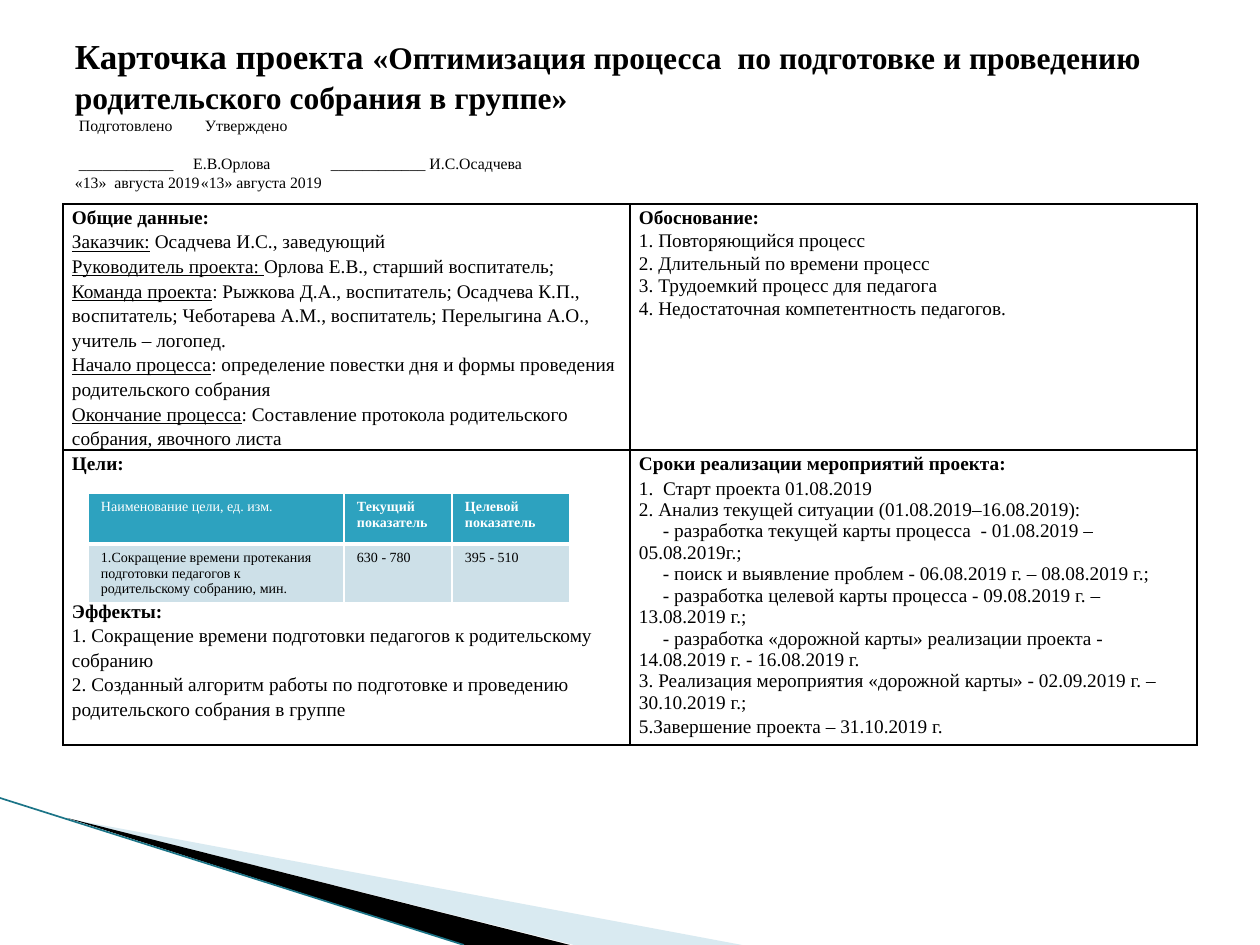
import pptx
import pptx.dml.color
import pptx.enum.shapes
import pptx.oxml
import pptx.oxml.ns
import pptx.util

PX = 914400 / 126
FONT = "Times New Roman"
SIDES = ("L", "R", "T", "B")
rgb = pptx.dml.color.RGBColor.from_string


def px(n):
    return pptx.util.Emu(round(n * PX))


def add_runs(p, runs, size, color="000000"):
    """Add (text, style) runs; style holds b for bold and u for underline."""
    for text, style in runs:
        r = p.add_run()
        r.text = text
        r.font.name = FONT
        r.font.size = pptx.util.Pt(size)
        r.font.color.rgb = rgb(color)
        r.font.bold = "b" in style
        r.font.underline = "u" in style


prs = pptx.Presentation()
prs.slide_width, prs.slide_height = px(1260), px(945)
s = prs.slides.add_slide(prs.slide_layouts[6])
ns = pptx.oxml.ns.nsdecls("a")

# Corner decoration
wedges = [
    ("A0CBDC", 40, [(69, 819), (742, 945), (574, 945)]),
    ("000000", 100, [(67, 818), (570, 945), (464, 945)]),
]
for color, opacity, points in wedges:
    builder = s.shapes.build_freeform(*points[0], scale=PX)
    builder.add_line_segments(points[1:], close=True)
    sp = builder.convert_to_shape()
    sp.shadow.inherit = False
    sp.fill.solid()
    sp.fill.fore_color.rgb = rgb(color)
    sp.line.fill.background()
    if opacity < 100:
        clr = sp.fill._xPr.find(".//" + pptx.oxml.ns.qn("a:srgbClr"))
        clr.append(pptx.oxml.parse_xml(f'<a:alpha {ns} val="{opacity * 1000}"/>'))

edge = s.shapes.add_connector(pptx.enum.shapes.MSO_CONNECTOR.STRAIGHT,
                              px(0), px(798), px(464), px(945))
edge.line.color.rgb = rgb("1B7487")
edge.line.width = pptx.util.Pt(0.95)
edge._element.spPr.append(pptx.oxml.parse_xml(f"<a:effectLst {ns}/>"))

# Project card: (runs, line spacing, space before in px, first-line indent in px)
general = [([("Общие данные:", "b")], 1.15, 0, 0)] + [
    ([(label, "u"), (text, "")], 1.15, 0, 0) for label, text in [
        ("Заказчик:", " Осадчева И.С., заведующий"),
        ("Руководитель проекта: ", "Орлова Е.В., старший воспитатель;"),
        ("Команда проекта", ": Рыжкова Д.А., воспитатель; Осадчева К.П., воспитатель; "
         "Чеботарева А.М., воспитатель; Перелыгина А.О., учитель – логопед."),
        ("Начало процесса", ": определение повестки дня и формы проведения родительского собрания"),
        ("Окончание процесса", ": Составление протокола родительского собрания, явочного листа"),
    ]]
reasons = [([("Обоснование:", "b")], 1.15, 0, 0)] + [
    ([(text, "")], 0.87, 4, 0) for text in [
        "1. Повторяющийся процесс",
        "2. Длительный по времени процесс",
        "3. Трудоемкий процесс для педагога",
        "4. Недостаточная компетентность педагогов.",
    ]]
goals = [
    ([("Цели:", "b")], 1.15, 0, 0),
    ([("Эффекты:", "b")], 1.15, 123, 0),
    ([("1. Сокращение времени подготовки педагогов к родительскому собранию", "")], 1.15, 0, 0),
    ([("2. Созданный алгоритм работы по подготовке и проведению "
       "родительского собрания в группе", "")], 1.15, 0, 0),
]
schedule = [([("Сроки реализации мероприятий проекта:", "b")], 1.15, 0, 0)] + [
    ([(text, "")], spacing, 0, indent) for text, spacing, indent in [
        ("1.  Старт проекта 01.08.2019", 1.15, 0),
        ("2. Анализ текущей ситуации (01.08.2019–16.08.2019):", 1, 0),
        ("- разработка текущей карты процесса  - 01.08.2019 – 05.08.2019г.;", 1, 24),
        ("- поиск и выявление проблем - 06.08.2019 г. – 08.08.2019 г.;", 1, 24),
        ("- разработка целевой карты процесса - 09.08.2019 г. – 13.08.2019 г.;", 1, 24),
        ("- разработка «дорожной карты» реализации проекта - 14.08.2019 г. - 16.08.2019 г.", 1, 24),
        ("3. Реализация мероприятия «дорожной карты» - 02.09.2019 г. – 30.10.2019 г.;", 1, 0),
        ("5.Завершение проекта – 31.10.2019 г.", 1.15, 0),
    ]]
indicators = [
    [[([(text, style)], 1, 0, 0)] for text, style in row] for row in [
        [("Наименование цели, ед. изм.", ""), ("Текущий показатель", "b"), ("Целевой показатель", "b")],
        [("1.Сокращение времени протекания подготовки педагогов к родительскому собранию, мин.", ""),
         ("630 - 780", ""), ("395 - 510", "")],
    ]]

# left, top, column widths, row heights, cells, size, insets, border, row fills, row text colours
tables = [
    (63, 204, [567, 567], [246, 295], [[general, reasons], [goals, schedule]], 11, (9, 0),
     "000000", [None, None], ["000000", "000000"]),
    (88, 493, [256, 108, 118], [51, 59], indicators, 8, (13, 6),
     "FFFFFF", ["2DA2BF", "CDE0E8"], ["FFFFFF", "000000"]),
]
for left, top, widths, heights, rows, size, (inset_x, inset_y), border, fills, colors in tables:
    tbl = s.shapes.add_table(len(rows), len(widths), px(left), px(top),
                             px(sum(widths)), px(sum(heights))).table
    tbl.first_row = tbl.horz_banding = False
    for i, width in enumerate(widths):
        tbl.columns[i].width = px(width)
    for i, row in enumerate(rows):
        tbl.rows[i].height = px(heights[i])
        for j, paragraphs in enumerate(row):
            cell = tbl.cell(i, j)
            cell.margin_left = cell.margin_right = px(inset_x)
            cell.margin_top = cell.margin_bottom = px(inset_y)
            tcPr = cell._tc.get_or_add_tcPr()
            for side in SIDES:
                header_rule = fills[0] and (i, side) in ((0, "B"), (1, "T"))
                weight = pptx.util.Pt(3 if header_rule else 1)
                tcPr.append(pptx.oxml.parse_xml(
                    f'<a:ln{side} {ns} w="{weight}"><a:solidFill>'
                    f'<a:srgbClr val="{border}"/></a:solidFill></a:ln{side}>'))
            if fills[i]:
                cell.fill.solid()
                cell.fill.fore_color.rgb = rgb(fills[i])
            else:
                cell.fill.background()
            tf = cell.text_frame
            for k, (runs, spacing, before, indent) in enumerate(paragraphs):
                p = tf.paragraphs[0] if k == 0 else tf.add_paragraph()
                p.line_spacing = float(spacing)
                if before:
                    p.space_before = px(before)
                if indent:
                    p._p.get_or_add_pPr().set("indent", str(px(indent)))
                add_runs(p, runs, size, colors[i])

# Title with the signature lines
tf = s.shapes.add_textbox(px(75), px(38), px(1110), px(156)).text_frame
tf.word_wrap = True
tf.margin_left = tf.margin_right = tf.margin_top = tf.margin_bottom = 0
p = tf.paragraphs[0]
p.line_spacing = px(39)
add_runs(p, [("Карточка проекта ", "b")], 20)
add_runs(p, [("«Оптимизация процесса  по подготовке и проведению "
              "родительского собрания в группе»", "b")], 18)

# left text, right text, left indent, tab to the right text, space before
signatures = [
    ("Подготовлено", "Утверждено", 4, 807, 0),
    ("____________     Е.В.Орлова", "____________ И.С.Осадчева", 4, 826, 19),
    ("«13»  августа 2019", "«13» августа 2019", 0, 822, 0),
]
for prepared, approved, indent, tab, before in signatures:
    p = tf.add_paragraph()
    p.line_spacing = px(19)
    p.space_before = px(before)
    pPr = p._p.get_or_add_pPr()
    pPr.set("marL", str(px(indent)))
    pPr.set("indent", "0")
    pPr.append(pptx.oxml.parse_xml(
        f'<a:tabLst {ns}><a:tab pos="{px(tab)}" algn="l"/></a:tabLst>'))
    add_runs(p, [(f"{prepared}\t{approved}", "")], 9)

prs.save("out.pptx")
